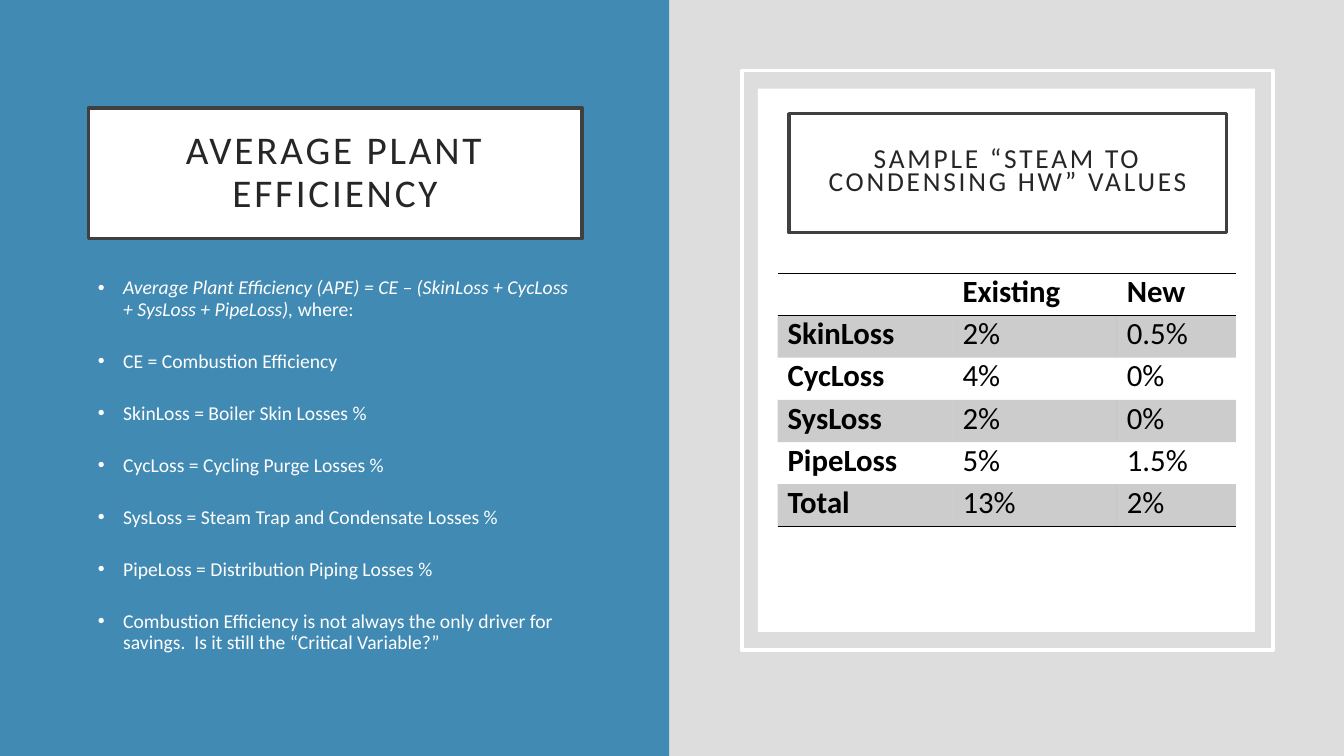
"""Build the Average Plant Efficiency slide with its loss table."""
from lxml import etree
from pptx import Presentation
from pptx.dml.color import RGBColor
from pptx.enum import shapes, text
from pptx.oxml import ns
from pptx.util import Pt

BLUE = RGBColor(0x41, 0x8A, 0xB3)
GREY = RGBColor(0xDD, 0xDD, 0xDD)
WHITE = RGBColor(0xFF, 0xFF, 0xFF)
BLACK = RGBColor(0, 0, 0)
FRAME = RGBColor(0x40, 0x40, 0x40)
INK = RGBColor(0x26, 0x26, 0x26)
FONT = "Calibri"


def add_panel(left, top, width, height, fill=None, line=None):
    panel = slide.shapes.add_shape(
        shapes.MSO_SHAPE.RECTANGLE, Pt(left), Pt(top), Pt(width), Pt(height))
    panel.shadow.inherit = False
    if fill is None:
        panel.fill.background()
    else:
        panel.fill.solid()
        panel.fill.fore_color.rgb = fill
    if line is None:
        panel.line.fill.background()
    else:
        panel.line.color.rgb = line
        panel.line.width = Pt(2.5)
    return panel


def write_heading(heading, words, size, spacing):
    heading.fill.solid()
    heading.fill.fore_color.rgb = WHITE
    heading.line.color.rgb = FRAME
    heading.line.width = Pt(2.5)
    frame = heading.text_frame
    frame.text = words
    frame.word_wrap = True
    frame.auto_size = text.MSO_AUTO_SIZE.NONE
    frame.vertical_anchor = text.MSO_ANCHOR.MIDDLE
    frame.margin_left = frame.margin_right = Pt(14.4)
    frame.margin_top = frame.margin_bottom = Pt(14.4)
    paragraph = frame.paragraphs[0]
    paragraph.alignment = text.PP_ALIGN.CENTER
    paragraph.line_spacing = spacing
    font = paragraph.runs[0].font
    font.name, font.size, font.color.rgb = FONT, Pt(size), INK
    font._element.set("spc", "200")


prs = Presentation()
prs.slide_width, prs.slide_height = Pt(960), Pt(540)
slide = prs.slides.add_slide(prs.slide_layouts[1])
slide.background.fill.solid()
slide.background.fill.fore_color.rgb = GREY

blue_half = add_panel(0, 0, 478, 540, fill=BLUE)
slide.shapes.element.insert(2, blue_half.element)

title = slide.shapes.title
title.left, title.top, title.width, title.height = Pt(63.2), Pt(77), Pt(352.4), Pt(93.4)
write_heading(title, "AVERAGE PLANT EFFICIENCY", 28, 0.9)

FORMULA = "Average Plant Efficiency (APE) = CE – (SkinLoss + CycLoss + SysLoss + PipeLoss), "
DEFINITIONS = [
    FORMULA,
    "CE = Combustion Efficiency",
    "SkinLoss = Boiler Skin Losses %",
    "CycLoss = Cycling Purge Losses %",
    "SysLoss = Steam Trap and Condensate Losses %",
    "PipeLoss = Distribution Piping Losses %",
    "Combustion Efficiency is not always the only driver for savings.  "
    "Is it still the “Critical Variable?”",
]
definitions = slide.placeholders[1]
definitions.left, definitions.top = Pt(62.8), Pt(195)
definitions.width, definitions.height = Pt(352.4), Pt(290)
definitions.text_frame.text = "\n".join(DEFINITIONS)
definitions.text_frame.auto_size = text.MSO_AUTO_SIZE.NONE
formula = definitions.text_frame.paragraphs[0]
formula.runs[0].font.italic = True
formula.add_run().text = "where:"
for paragraph in definitions.text_frame.paragraphs:
    paragraph.line_spacing = 0.9
    paragraph.space_before, paragraph.space_after = Pt(10), Pt(12)
    properties = paragraph._p.get_or_add_pPr()
    properties.set("marL", str(Pt(18)))
    properties.set("indent", str(Pt(-18)))
    bullet_font = etree.SubElement(properties, ns.qn("a:buFont"))
    bullet_font.set("typeface", "Arial")
    etree.SubElement(properties, ns.qn("a:buChar")).set("char", "•")
    for run in paragraph.runs:
        run.font.name, run.font.size, run.font.color.rgb = FONT, Pt(14), WHITE

add_panel(530, 50.4, 379.4, 414, line=WHITE)
add_panel(541.4, 63.4, 355, 388, fill=WHITE)

LOSSES = [
    ("", "Existing", "New"),
    ("SkinLoss", "2%", "0.5%"),
    ("CycLoss", "4%", "0%"),
    ("SysLoss", "2%", "0%"),
    ("PipeLoss", "5%", "1.5%"),
    ("Total", "13%", "2%"),
]
losses = slide.shapes.add_table(
    len(LOSSES), 3, Pt(555.4), Pt(195.2), Pt(327.4), Pt(180.8)).table
losses.horz_banding = losses.first_row = False
losses._tbl.tblPr.find(ns.qn("a:tableStyleId")).text = "{2D5ABB26-0587-4C30-8999-92F81FD0307C}"
for column, width in zip(losses.columns, (125, 117.4, 85)):
    column.width = Pt(width)

for r, values in enumerate(LOSSES):
    ruled_sides = {0: ("a:lnB", "a:lnT"), len(LOSSES) - 1: ("a:lnB",)}.get(r, ())
    for c, value in enumerate(values):
        cell = losses.cell(r, c)
        cell.margin_left = cell.margin_right = Pt(7.2)
        cell.margin_top = cell.margin_bottom = 0
        cell.text = value
        font = cell.text_frame.paragraphs[0].font
        for run in cell.text_frame.paragraphs[0].runs:
            font = run.font
        font.name, font.size, font.color.rgb = FONT, Pt(22), BLACK
        font.bold = r == 0 or c == 0
        cell_properties = cell._tc.get_or_add_tcPr()
        if r % 2:
            cell.fill.solid()
            cell.fill.fore_color.rgb = BLACK
            shade = cell_properties.find(".//" + ns.qn("a:srgbClr"))
            etree.SubElement(shade, ns.qn("a:alpha")).set("val", "20000")
        else:
            cell.fill.background()
        for side in ruled_sides:
            rule = etree.Element(ns.qn(side), w=str(Pt(1)))
            rule_fill = etree.SubElement(rule, ns.qn("a:solidFill"))
            etree.SubElement(rule_fill, ns.qn("a:srgbClr")).set("val", str(BLACK))
            cell_properties.insert(0, rule)

sample = add_panel(563.6, 81.2, 312.6, 85)
write_heading(sample, "SAMPLE “STEAM TO CONDENSING HW” VALUES", 19.6, 0.7)

prs.save("out.pptx")
